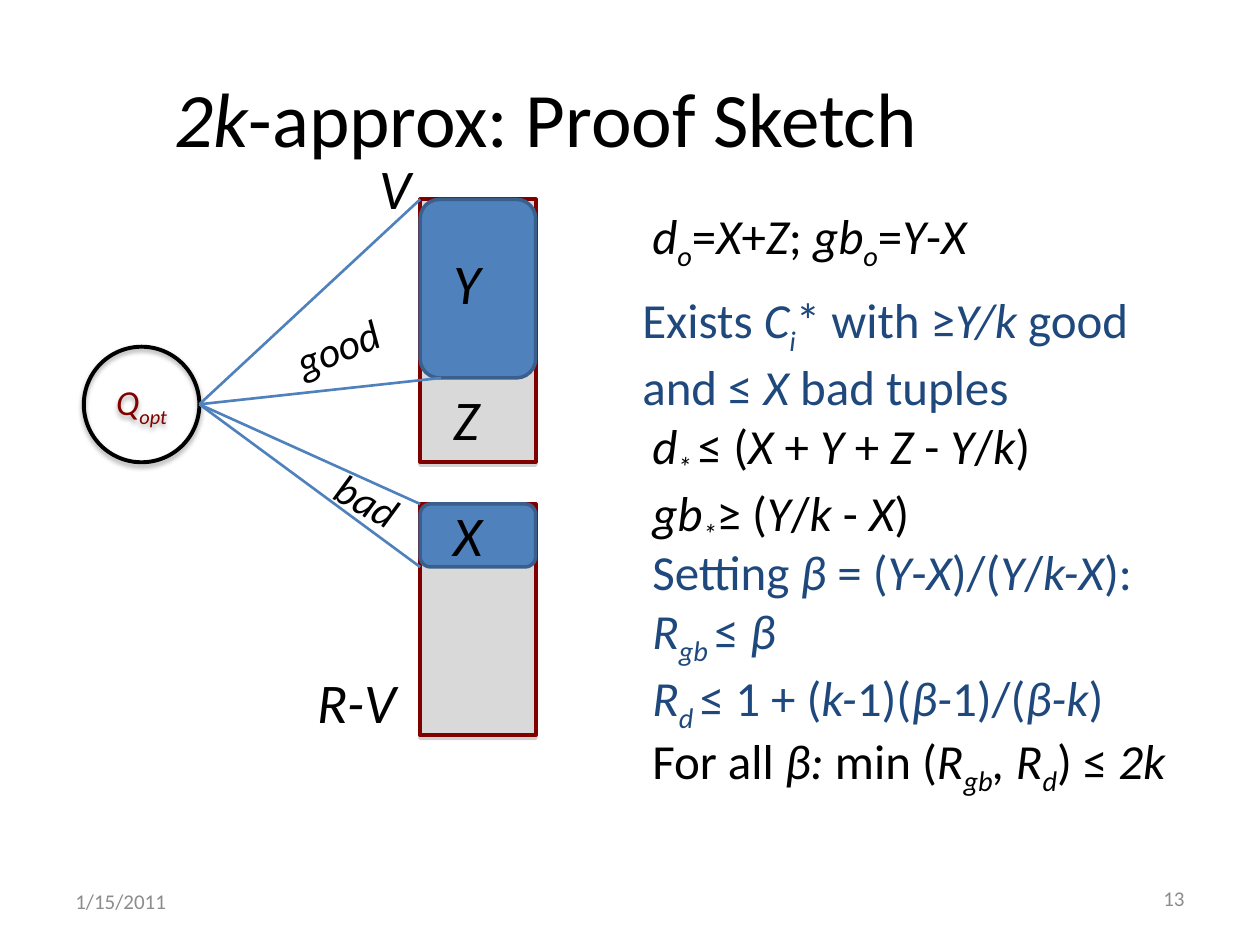
import pptx
import pptx.util
import pptx.dml.color
import pptx.enum.shapes
import pptx.enum.text
import pptx.oxml
import pptx.oxml.ns

Cm = pptx.util.Cm
Pt = pptx.util.Pt
SHAPE = pptx.enum.shapes.MSO_SHAPE
ALIGN = pptx.enum.text.PP_ALIGN
MIDDLE = pptx.enum.text.MSO_ANCHOR.MIDDLE

COLORS = {
    "black": "000000", "navy": "1F497D", "blue": "4F81BD", "edge": "3A5F8C",
    "maroon": "800000", "light": "D9D9D9", "footer": "8C8C8C", "shade": "808080",
}


def rgb(name):
    return pptx.dml.color.RGBColor.from_string(COLORS[name])


class ProofSlide:
    """Draws styled elements; in text, _ toggles italics and ~ subscript."""

    font_name = "Calibri"

    def __init__(self, slide):
        self.slide = slide

    def fill_text(self, frame, paragraphs, size, color="black", align=ALIGN.LEFT):
        for number, markup in enumerate(paragraphs):
            paragraph = frame.add_paragraph() if number else frame.paragraphs[0]
            paragraph.alignment = align
            italic = False
            for level, part in enumerate(markup.split("~")):
                for piece_number, piece in enumerate(part.split("_")):
                    if piece_number:
                        italic = not italic
                    if piece:
                        self.add_run(paragraph, piece, size, color, italic, level % 2)

    def add_run(self, paragraph, text, size, color, italic, subscript):
        run = paragraph.add_run()
        run.text = text
        formats = {"name": self.font_name, "size": Pt(size), "italic": italic}
        for attribute, value in formats.items():
            setattr(run.font, attribute, value)
        run.font.color.rgb = rgb(color)
        if subscript:
            run.font._element.set("baseline", "-25000")

    def title(self, box, markup):
        title = self.slide.shapes.title
        for attribute, value in zip(("left", "top", "width", "height"), box):
            setattr(title, attribute, Cm(value))
        title.text_frame.vertical_anchor = MIDDLE
        self.fill_text(title.text_frame, [markup], 44, align=ALIGN.CENTER)

    def text(self, box, paragraphs, size, color="black", rotation=0, **formats):
        textbox = self.slide.shapes.add_textbox(*map(Cm, box))
        textbox.rotation = rotation
        textbox.text_frame.word_wrap = True
        if "anchor" in formats:
            textbox.text_frame.vertical_anchor = formats["anchor"]
        self.fill_text(textbox.text_frame, paragraphs, size, color,
                       formats.get("align", ALIGN.LEFT))

    def shape(self, kind, box, fill, line, width, shadow=None, blur=0):
        shape = self.slide.shapes.add_shape(kind, *map(Cm, box))
        shape.shadow.inherit = False
        if fill:
            shape.fill.solid()
            shape.fill.fore_color.rgb = rgb(fill)
        else:
            shape.fill.background()
        shape.line.color.rgb = rgb(line)
        shape.line.width = Pt(width)
        if shadow:
            effects = shape._element.spPr.find(pptx.oxml.ns.qn("a:effectLst"))
            effects.append(pptx.oxml.parse_xml(
                f'<a:outerShdw {pptx.oxml.ns.nsdecls("a")} blurRad="{Pt(blur)}" '
                f'dist="{Pt(1.8)}" dir="5400000" rotWithShape="0">'
                f'<a:srgbClr val="{COLORS[shadow]}"><a:alpha val="35000"/>'
                '</a:srgbClr></a:outerShdw>'))
        return shape

    def line(self, start, end):
        connector = self.slide.shapes.add_connector(
            pptx.enum.shapes.MSO_CONNECTOR.STRAIGHT, *map(Cm, start + end))
        connector.line.color.rgb = rgb("blue")
        connector.line.width = Pt(1.5)
        connector._element.spPr.append(pptx.oxml.parse_xml(
            f'<a:effectLst {pptx.oxml.ns.nsdecls("a")}/>'))


def main():
    deck = pptx.Presentation()
    deck.slide_width, deck.slide_height = Cm(25.4), Cm(19.05)
    proof = ProofSlide(deck.slides.add_slide(deck.slide_layouts[5]))

    # Title, date and slide number
    proof.title((1.27, 0.76, 19.48, 3.18), "_2k_-approx: Proof Sketch")
    proof.text((1.27, 17.65, 5.92, 1.02), ["1/15/2011"], 12, "footer", anchor=MIDDLE)
    proof.text((19.89, 17.58, 4.24, 1.07), ["13"], 12, "footer",
               anchor=MIDDLE, align=ALIGN.RIGHT)

    # Optimal query
    diameter = 2.33
    query = proof.shape(SHAPE.OVAL, (1.69, 6.99, diameter, diameter),
                        None, "black", 2.25, "black", 3.1)
    query.text_frame.vertical_anchor = MIDDLE
    proof.fill_text(query.text_frame, ["_Q~opt~_"], 20, "maroon", ALIGN.CENTER)

    # Relation V and its complement R-V, with the covered parts Y and X
    bar_left, bar_width = 8.47, 2.33
    v_top, r_top, y_height, x_height = 4.02, 10.16, 3.6, 1.27
    for top, height in ((v_top, 5.29), (r_top, 4.66)):
        proof.shape(SHAPE.RECTANGLE, (bar_left, top, bar_width, height),
                    "light", "maroon", 2.25, "shade")
    for top, height in ((r_top, x_height), (v_top, y_height)):
        proof.shape(SHAPE.ROUNDED_RECTANGLE, (bar_left, top, bar_width, height),
                    "blue", "edge", 2)

    # Rays from the query to the covered parts
    query_edge = (4.02, 8.15)
    for end in ((bar_left, v_top), (8.89, v_top + y_height),
                (bar_left, r_top), (bar_left, r_top + x_height)):
        proof.line(query_edge, end)
    proof.text((5.61, 6.02, 4.01, 1.27), ["_good_"], 24, rotation=-22.4)
    proof.text((6.43, 9.73, 2.97, 1.27), ["_bad_"], 24, rotation=29.2)

    # Set names
    for name, left, top, width in (
            ("V", 7.41, 2.97, 1.47), ("R-V", 6.15, 13.34, 4.45),
            ("Y", 8.89, 4.88, 1.47), ("Z", 8.89, 7.62, 1.47),
            ("X", 8.89, 9.96, 1.47)):
        proof.text((left, top, width, 1.63), [f"_{name}_"], 32)

    # Steps of the proof
    step_left, step_width = 12.9, 10.59
    steps = (
        (step_left, 4.02, step_width, 1.45, "black",
         ["_d~o~_=_X_+_Z_; _gb~o~_=_Y_-_X_"]),
        (12.7, 5.72, step_width, 2.64, "navy",
         ["Exists _C~i~_* with ≥_Y/k_ good and ≤ _X_ bad tuples"]),
        (step_left, 8.26, step_width, 2.64, "black",
         ["_d~* ~_≤ (_X_ + _Y_ + _Z_ - _Y_/_k_)", "_gb~*~_≥ (_Y_/_k_ - _X_)"]),
        (step_left, 10.8, step_width, 3.84, "navy",
         ["Setting_ β _= (_Y_-_X_)/(_Y_/_k-X_):", "_R~gb ~_≤ _β_",
          "_R~d ~_≤ 1 + (_k-_1)(_β-_1)/(_β-k_)"]),
        (step_left, 14.6, 11.63, 1.45, "black",
         ["For all _β: _min (_R~gb~, R~d~_) ≤_ 2k_"]),
    )
    for *box, color, formulas in steps:
        proof.text(box, formulas, 28, color)

    deck.save("out.pptx")


if __name__ == "__main__":
    main()
